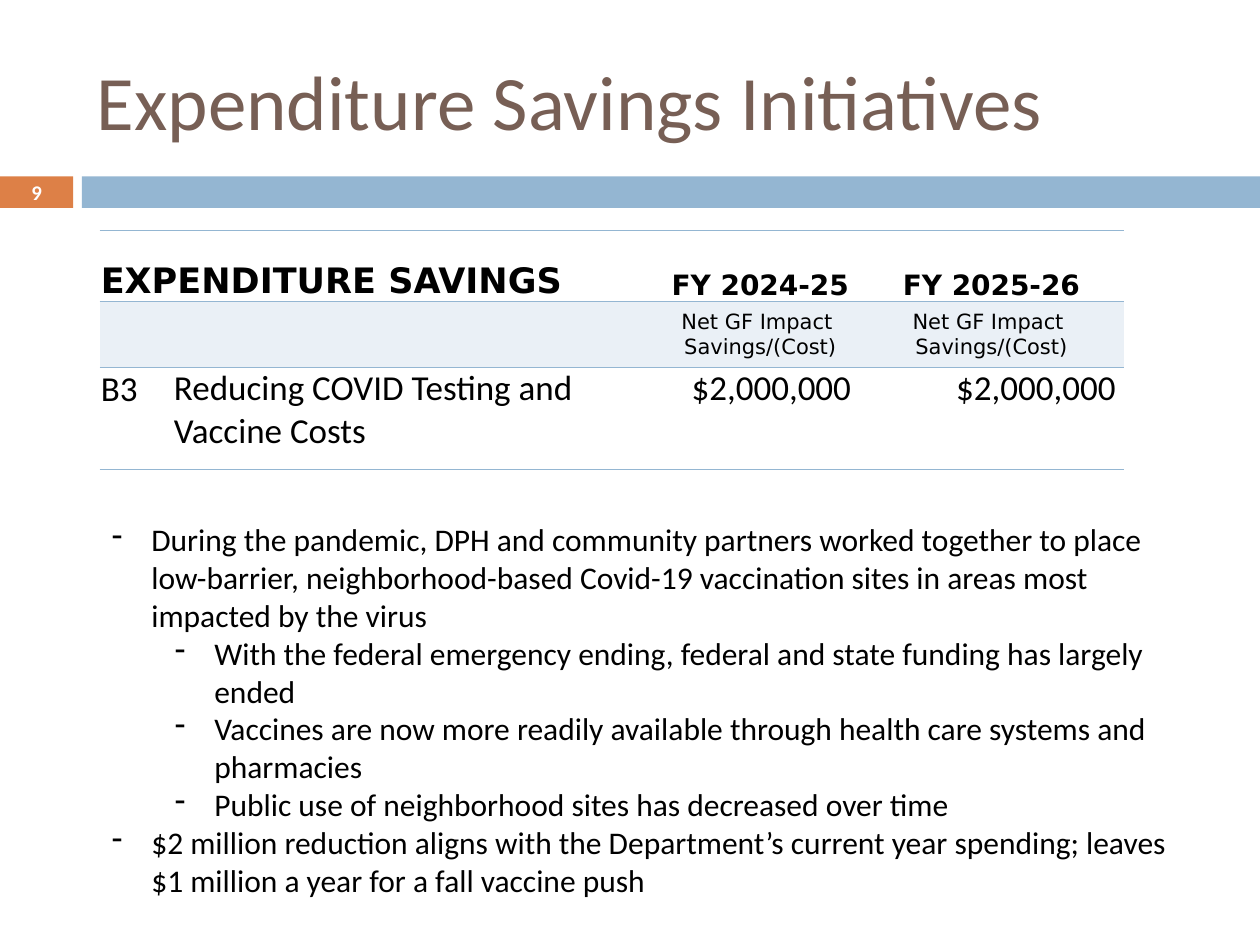
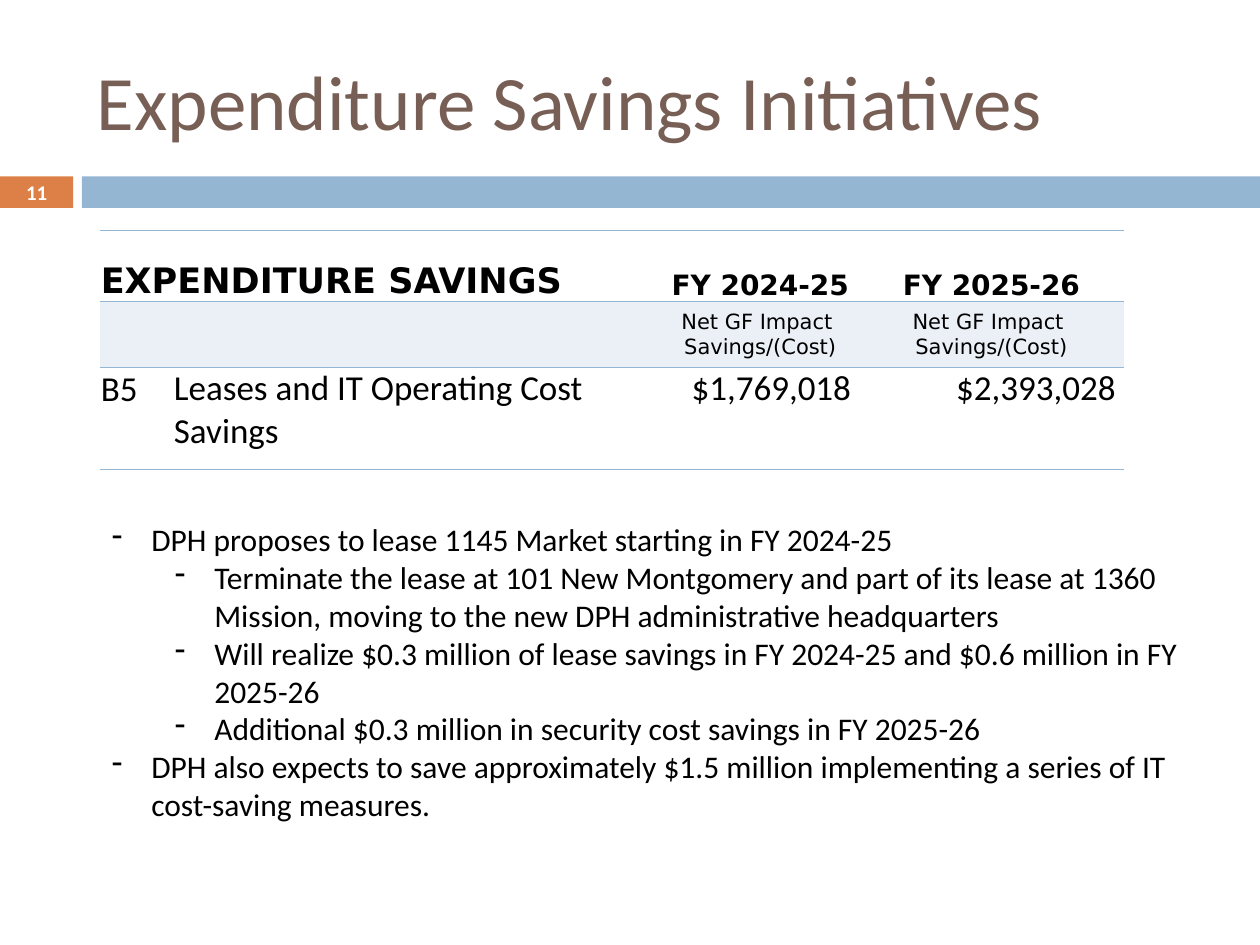
from lxml import etree
from pptx import Presentation, util as u
from pptx.dml.color import RGBColor
from pptx.enum import shapes, text
from pptx.oxml import ns

Pt = u.Pt
ORANGE = RGBColor(0xDD, 0x80, 0x47)
BLUE = RGBColor(0x94, 0xB6, 0xD2)
PALE_BLUE = RGBColor(0xEA, 0xF0, 0xF6)
BROWN = RGBColor(0x77, 0x5F, 0x55)
BLACK = RGBColor(0, 0, 0)
WHITE = RGBColor(255, 255, 255)

TITLE_FONT = {"name": "Calibri", "size": Pt(44), "color": BROWN}
NUMBER_FONT = {"name": "Calibri", "size": Pt(11.9), "bold": True, "color": WHITE}
BODY_FONT = {"name": "Calibri", "size": Pt(18), "color": BLACK}
ENTRY_FONT = {"name": "Calibri", "size": Pt(20), "color": BLACK}
HEADING_FONT = {"name": "DejaVu Sans", "size": Pt(20), "bold": True, "color": BLACK}
YEAR_FONT = {**HEADING_FONT, "size": Pt(16)}
NOTE_FONT = {"name": "DejaVu Sans", "size": Pt(12), "color": BLACK}

LEFT, CENTER, RIGHT = text.PP_ALIGN.LEFT, text.PP_ALIGN.CENTER, text.PP_ALIGN.RIGHT
TOP, MIDDLE, BOTTOM = (text.MSO_ANCHOR.TOP, text.MSO_ANCHOR.MIDDLE,
                       text.MSO_ANCHOR.BOTTOM)

TITLE = "Expenditure Savings Initiatives"
IMPACT_NOTE = "Net GF Impact \nSavings/(Cost)"
NO_STYLE = "{2D5ABB26-0587-4C30-8999-92F81FD0307C}"
MARGIN = 56.9
COLUMN_WIDTHS = (42.5, 278.6, 113, 151.2)
ROW_HEIGHTS = (40.6, 37.4, 58.6)
# Top and bottom rule weights of each table row
ROW_RULES = ((1, 1), (1, 0.5), (0.5, 1))

# Slide number, table entry, and (level, text) points
SLIDES = [
    ("9", ("B3", "Reducing COVID Testing and Vaccine Costs",
           " $2,000,000 ", " $2,000,000 "), [
        (0, "During the pandemic, DPH and community partners worked together to "
            "place low-barrier, neighborhood-based Covid-19 vaccination sites in "
            "areas most impacted by the virus"),
        (1, "With the federal emergency ending, federal and state funding has "
            "largely ended"),
        (1, "Vaccines are now more readily available through health care systems "
            "and pharmacies"),
        (1, "Public use of neighborhood sites has decreased over time"),
        (0, "$2 million reduction aligns with the Department’s current year "
            "spending; leaves $1 million a year for a fall vaccine push")]),
    ("11", ("B5", "Leases and IT Operating Cost Savings",
            " $1,769,018 ", " $2,393,028 "), [
        (0, "DPH proposes to lease 1145 Market starting in FY 2024-25"),
        (1, "Terminate the lease at 101 New Montgomery and part of its lease at "
            "1360 Mission, moving to the new DPH administrative headquarters"),
        (1, "Will realize $0.3 million of lease savings in FY 2024-25 and $0.6 "
            "million in FY 2025-26"),
        (1, "Additional $0.3 million in security cost savings in FY 2025-26"),
        (0, "DPH also expects to save approximately $1.5 million implementing a "
            "series of IT cost-saving measures.")]),
]


def write(paragraph, words, font_values, alignment=LEFT):
    run = paragraph.add_run()
    run.text = words
    for name, value in font_values.items():
        if name == "color":
            run.font.color.rgb = value
        else:
            setattr(run.font, name, value)
    paragraph.alignment = alignment


def add_band(slide, left, width, color):
    shape = slide.shapes.add_shape(shapes.MSO_SHAPE.RECTANGLE, Pt(left), Pt(100.8),
                                   Pt(width), Pt(18))
    shape.shadow.inherit = False
    shape.fill.solid()
    shape.fill.fore_color.rgb = color
    shape.line.fill.background()


def add_text_box(slide, left, top, width, height, anchor=TOP):
    shape = slide.shapes.add_textbox(Pt(left), Pt(top), Pt(width), Pt(height))
    shape.text_frame.word_wrap = True
    shape.text_frame.vertical_anchor = anchor
    return shape.text_frame


def set_title(slide):
    shape = slide.shapes.title
    place = {"left": 48.2, "top": 18, "width": 642.2, "height": 77.8}
    for name, value in place.items():
        setattr(shape, name, Pt(value))
    shape.text_frame.vertical_anchor = MIDDLE
    write(shape.text_frame.paragraphs[0], TITLE, TITLE_FONT)


def add_number(slide, number):
    frame = add_text_box(slide, 0, 100.1, 41.8, 19.4, MIDDLE)
    write(frame.paragraphs[0], number, NUMBER_FONT, CENTER)


def add_rule(cell, side, weight):
    properties = cell._tc.get_or_add_tcPr()
    line = etree.SubElement(properties, ns.qn("a:" + side), w=str(int(Pt(weight))))
    fill = etree.SubElement(line, ns.qn("a:solidFill"))
    etree.SubElement(fill, ns.qn("a:srgbClr"), val=str(BLUE))


def format_cell(cell, row, words, font_values, alignment, anchor, inset):
    for side, weight in zip(("lnT", "lnB"), ROW_RULES[row]):
        add_rule(cell, side, weight)
    if row == 1:
        cell.fill.solid()
        cell.fill.fore_color.rgb = PALE_BLUE
    else:
        cell.fill.background()
    margins = {"margin_left": inset, "margin_top": inset,
               "margin_right": inset, "margin_bottom": 0}
    for name, value in margins.items():
        setattr(cell, name, Pt(value))
    cell.vertical_anchor = anchor
    for index, line in enumerate(words.split("\n") if words else []):
        frame = cell.text_frame
        paragraph = frame.add_paragraph() if index else frame.paragraphs[0]
        write(paragraph, line, font_values, alignment)


def add_savings_table(slide, entry):
    table = slide.shapes.add_table(
        len(ROW_HEIGHTS), len(COLUMN_WIDTHS), Pt(MARGIN), Pt(131.8),
        Pt(sum(COLUMN_WIDTHS)), Pt(sum(ROW_HEIGHTS))).table
    table._tbl.tblPr.find(ns.qn("a:tableStyleId")).text = NO_STYLE
    table.first_row = table.horz_banding = False
    for column, width in zip(table.columns, COLUMN_WIDTHS):
        column.width = Pt(width)
    for row, height in zip(table.rows, ROW_HEIGHTS):
        row.height = Pt(height)
    table.cell(0, 0).merge(table.cell(0, 1))

    code, initiative, first_year, second_year = entry
    heading = ("EXPENDITURE SAVINGS", HEADING_FONT, LEFT, BOTTOM, 0.7)
    blank = ("", NOTE_FONT, LEFT, MIDDLE, 0.7)
    note = (IMPACT_NOTE, NOTE_FONT, CENTER, MIDDLE, 0.7)
    rows = [
        [heading, blank] + [(year, YEAR_FONT, CENTER, BOTTOM, 0.7)
                            for year in ("FY 2024-25", "FY 2025-26")],
        [blank, blank, note, note],
        [(code, ENTRY_FONT, LEFT, TOP, 0.7), (initiative, ENTRY_FONT, LEFT, TOP, 0)]
        + [(amount, ENTRY_FONT, RIGHT, TOP, 0) for amount in (first_year, second_year)],
    ]
    for row, cells in enumerate(rows):
        for column, values in enumerate(cells):
            format_cell(table.cell(row, column), row, *values)


def add_points(slide, points):
    frame = add_text_box(slide, MARGIN, 293.8, 632.9, 225)
    for index, (level, words) in enumerate(points):
        paragraph = frame.add_paragraph() if index else frame.paragraphs[0]
        write(paragraph, words, BODY_FONT)
        paragraph.level = level
        properties = paragraph._p.get_or_add_pPr()
        properties.set("marL", str(int(Pt(22.5 + 36 * level))))
        properties.set("indent", str(int(Pt(-22.5))))
        etree.SubElement(properties, ns.qn("a:buChar"), char="-")


def main():
    presentation = Presentation()
    presentation.slide_width, presentation.slide_height = Pt(720), Pt(540)
    for number, entry, points in SLIDES:
        slide = presentation.slides.add_slide(presentation.slide_layouts[5])
        # Shared frame
        add_band(slide, 0, 41.8, ORANGE)
        add_band(slide, 46.8, 673.2, BLUE)
        set_title(slide)
        add_number(slide, number)
        # Content
        add_savings_table(slide, entry)
        add_points(slide, points)
    presentation.save("out.pptx")


if __name__ == "__main__":
    main()
